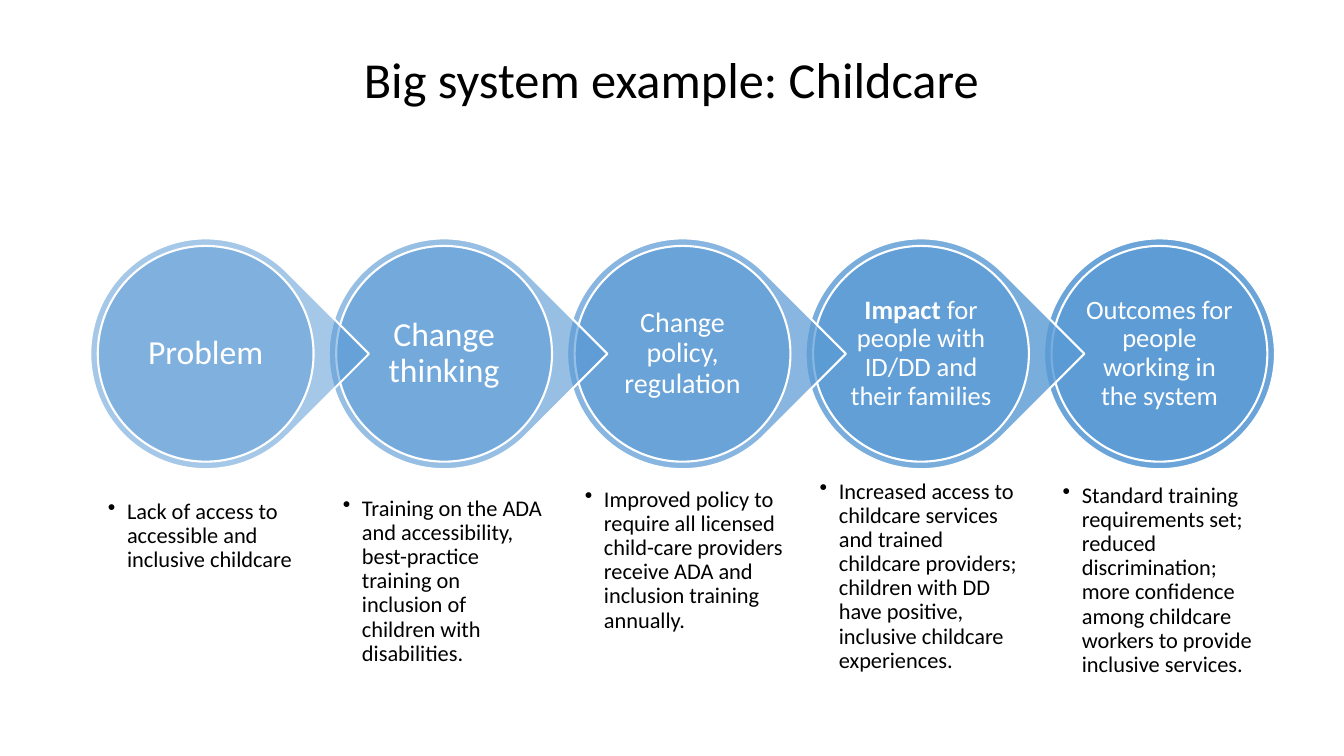
from lxml import etree
from pptx import Presentation
from pptx.dml.color import RGBColor
from pptx.enum.shapes import MSO_SHAPE
from pptx.enum.text import MSO_ANCHOR, PP_ALIGN
from pptx.oxml.ns import qn
from pptx.util import Inches, Pt

FONT = "Calibri"
BLUE, WHITE, BLACK = "5B9BD5", "FFFFFF", "000000"

FIRST_CENTER, PITCH, CENTER_Y = 2.04, 2.365, 3.51
RING, DISC, LABEL = 2.29, 2.14, 1.53
TOP_OPACITY, OPACITY_STEP = 90, 40 / 9

# bold lead, rest of label, label size, note left, note top, note
stages = [
    ("", "Problem", 24, 1.0, 4.89,
     "Lack of access to accessible and inclusive childcare"),
    ("", "Change thinking", 24, 3.33, 4.86,
     "Training on the ADA and accessibility, best-practice training on "
     "inclusion of children with disabilities."),
    ("", "Change policy, regulation", 20, 5.73, 4.77,
     "Improved policy to require all licensed child-care providers receive "
     "ADA and inclusion training annually."),
    ("Impact", " for people with ID/DD and their families", 19, 8.06, 4.69,
     "Increased access to childcare services and trained childcare providers; "
     "children with DD have positive, inclusive childcare experiences."),
    ("", "Outcomes for people working in the system", 19, 10.47, 4.73,
     "Standard training requirements set; reduced discrimination; more "
     "confidence among childcare workers to provide inclusive services."),
]

prs = Presentation()
prs.slide_width, prs.slide_height = Inches(13.33), Inches(7.5)
slide = prs.slides.add_slide(prs.slide_layouts[5])


def format_paragraph(paragraph, size, color, align):
    paragraph.alignment = align
    paragraph.line_spacing = 0.9
    for run in paragraph.runs:
        run.font.name = FONT
        run.font.size = Pt(size)
        run.font.color.rgb = RGBColor.from_string(color)


def add_textbox(left, top, width, height, inset, anchor):
    frame = slide.shapes.add_textbox(
        Inches(left), Inches(top), Inches(width), Inches(height)).text_frame
    frame.word_wrap = True
    frame.vertical_anchor = anchor
    frame.margin_left = frame.margin_right = Inches(inset)
    frame.margin_top = frame.margin_bottom = Inches(inset)
    return frame


title = slide.shapes.title
title.left, title.top = Inches(0.91), Inches(0.37)
title.width, title.height = Inches(11.5), Inches(0.89)
title.text_frame.text = "Big system example: Childcare"
title.text_frame.vertical_anchor = MSO_ANCHOR.MIDDLE
format_paragraph(title.text_frame.paragraphs[0], 36, BLACK, PP_ALIGN.CENTER)

# The last stage lies at the back, so each pointer overlaps the stage after it
last = len(stages) - 1
for index in range(last, -1, -1):
    lead, label, label_size, note_left, note_top, note = stages[index]
    center_x = FIRST_CENTER + PITCH * index

    ring_kind = MSO_SHAPE.OVAL if index == last else MSO_SHAPE.TEAR
    layers = [(ring_kind, RING), (MSO_SHAPE.OVAL, DISC)]
    for depth, (kind, size) in enumerate(layers, start=2 * (last - index)):
        circle = slide.shapes.add_shape(
            kind, Inches(center_x - size / 2), Inches(CENTER_Y - size / 2),
            Inches(size), Inches(size))
        circle.shadow.inherit = False
        if kind == MSO_SHAPE.TEAR:
            circle.rotation = 45
        circle.fill.solid()
        circle.fill.fore_color.rgb = RGBColor.from_string(BLUE)
        opacity = round(TOP_OPACITY - OPACITY_STEP * depth)
        color = circle.fill._xPr.find(qn("a:solidFill"))[0]
        etree.SubElement(color, qn("a:alpha")).set("val", str(opacity * 1000))
        circle.line.color.rgb = RGBColor.from_string(WHITE)
        circle.line.width = Pt(1.5)

    heading = add_textbox(center_x - LABEL / 2, CENTER_Y - LABEL / 2,
                          LABEL, LABEL, 0.03, MSO_ANCHOR.MIDDLE).paragraphs[0]
    for part, bold in ((lead, True), (label, False)):
        if part:
            run = heading.add_run()
            run.text = part
            run.font.bold = bold
    format_paragraph(heading, label_size, WHITE, PP_ALIGN.CENTER)

    detail = add_textbox(note_left, note_top, DISC, 1.25, 0.07,
                         MSO_ANCHOR.TOP).paragraphs[0]
    detail.text = note
    format_paragraph(detail, 16, BLACK, PP_ALIGN.LEFT)
    properties = detail._p.get_or_add_pPr()
    properties.set("marL", str(Inches(0.19)))
    properties.set("indent", str(-Inches(0.19)))
    etree.SubElement(properties, qn("a:buChar")).set("char", "•")

prs.save("out.pptx")
